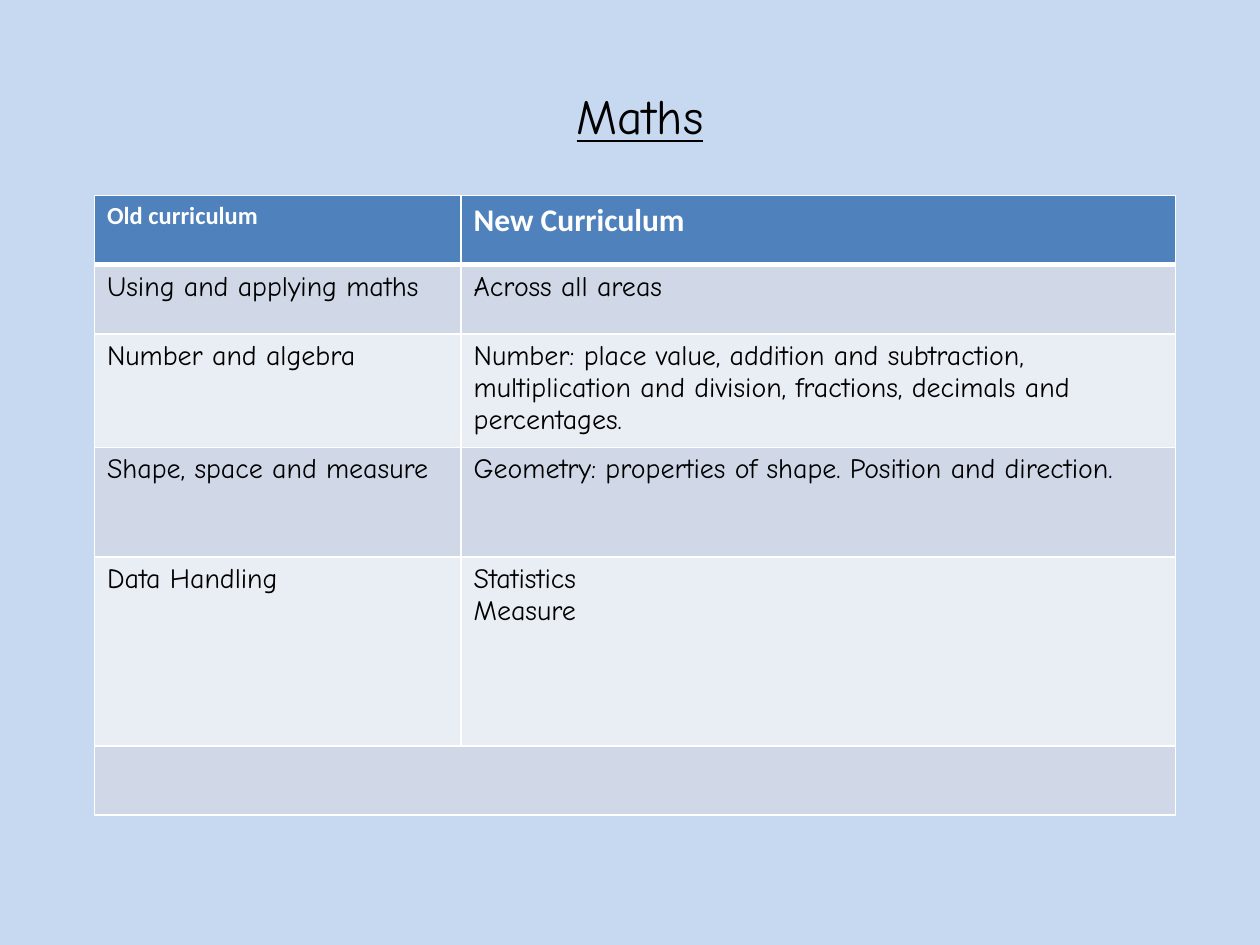
from dataclasses import dataclass

from lxml.etree import SubElement
from pptx import Presentation
from pptx.dml.color import RGBColor
from pptx.enum.text import MSO_ANCHOR, PP_ALIGN
from pptx.oxml.ns import qn
from pptx.util import Inches, Pt


@dataclass(frozen=True)
class Theme:
    background: str = "C6D9F1"
    header: str = "4F81BD"
    bands: tuple = ("D0D8E8", "E9EDF4")
    ink: str = "000000"
    white: str = "FFFFFF"
    head_font: str = "Calibri"
    body_font: str = "Comic Neue"
    title_size: int = 28
    head_sizes: tuple = (14, 18)
    body_size: int = 16
    rule: int = 1
    head_rule: int = 3


THEME = Theme()

COL_WIDTHS = (2.91, 5.67)
ROW_HEIGHTS = (0.55, 0.55, 0.82, 0.87, 1.5, 0.55)
HEADINGS = ("Old curriculum", "New Curriculum")
TOPICS = (
    ("Using and applying maths", "Across all areas"),
    ("Number and algebra",
     "Number: place value, addition and subtraction, multiplication and "
     "division, fractions, decimals and percentages."),
    ("Shape, space and measure",
     "Geometry: properties of shape. Position and direction."),
    ("Data Handling", "Statistics\nMeasure"),
    ("", ""),
)


def style_text(tf, font, size, color, bold=False):
    for p in tf.paragraphs:
        p.font.name = font
        p.font.size = Pt(size)
        p.font.bold = bold
        p.font.color.rgb = RGBColor.from_string(color)


def add_title(s, text):
    tf = s.shapes.add_textbox(
        Inches(0.91), Inches(0.6), Inches(8.34), Inches(0.63)).text_frame
    tf.word_wrap = True
    tf.vertical_anchor = MSO_ANCHOR.MIDDLE
    tf.text = text
    style_text(tf, THEME.body_font, THEME.title_size, THEME.ink)
    p = tf.paragraphs[0]
    p.alignment = PP_ALIGN.CENTER
    p.font.underline = True


def set_borders(cell, **widths):
    tc_pr = cell._tc.get_or_add_tcPr()
    for side in "LRTB":
        ln = SubElement(tc_pr, qn(f"a:ln{side}"),
                        w=str(Pt(widths.get(side, THEME.rule))))
        fill = SubElement(ln, qn("a:solidFill"))
        SubElement(fill, qn("a:srgbClr"), val=THEME.white)


def paint_cell(cell, color, **widths):
    # Borders come before the fill in the cell properties
    set_borders(cell, **widths)
    cell.fill.solid()
    cell.fill.fore_color.rgb = RGBColor.from_string(color)


def add_curriculum_table(s):
    table = s.shapes.add_table(
        len(ROW_HEIGHTS), len(COL_WIDTHS), Inches(0.75), Inches(1.55),
        Inches(sum(COL_WIDTHS)), Inches(sum(ROW_HEIGHTS))).table
    for column, width in zip(table.columns, COL_WIDTHS):
        column.width = Inches(width)
    for row, height in zip(table.rows, ROW_HEIGHTS):
        row.height = Inches(height)

    # Header row
    for c, (heading, size) in enumerate(zip(HEADINGS, THEME.head_sizes)):
        cell = table.cell(0, c)
        paint_cell(cell, THEME.header, B=THEME.head_rule)
        cell.text = heading
        style_text(cell.text_frame, THEME.head_font, size, THEME.white, True)

    # Banded topic rows
    for r, topic in enumerate(TOPICS, start=1):
        for c, text in enumerate(topic):
            cell = table.cell(r, c)
            top = THEME.head_rule if r == 1 else THEME.rule
            paint_cell(cell, THEME.bands[(r - 1) % 2], T=top)
            if text:
                cell.text = text
                style_text(cell.text_frame, THEME.body_font,
                           THEME.body_size, THEME.ink)

    # Closing row spans the table
    last = len(ROW_HEIGHTS) - 1
    table.cell(last, 0).merge(table.cell(last, len(COL_WIDTHS) - 1))


def main():
    prs = Presentation()
    prs.slide_width, prs.slide_height = Inches(10), Inches(7.5)
    s = prs.slides.add_slide(prs.slide_layouts[6])
    s.background.fill.solid()
    s.background.fill.fore_color.rgb = RGBColor.from_string(THEME.background)
    add_title(s, "Maths")
    add_curriculum_table(s)
    prs.save("out.pptx")


if __name__ == "__main__":
    main()
